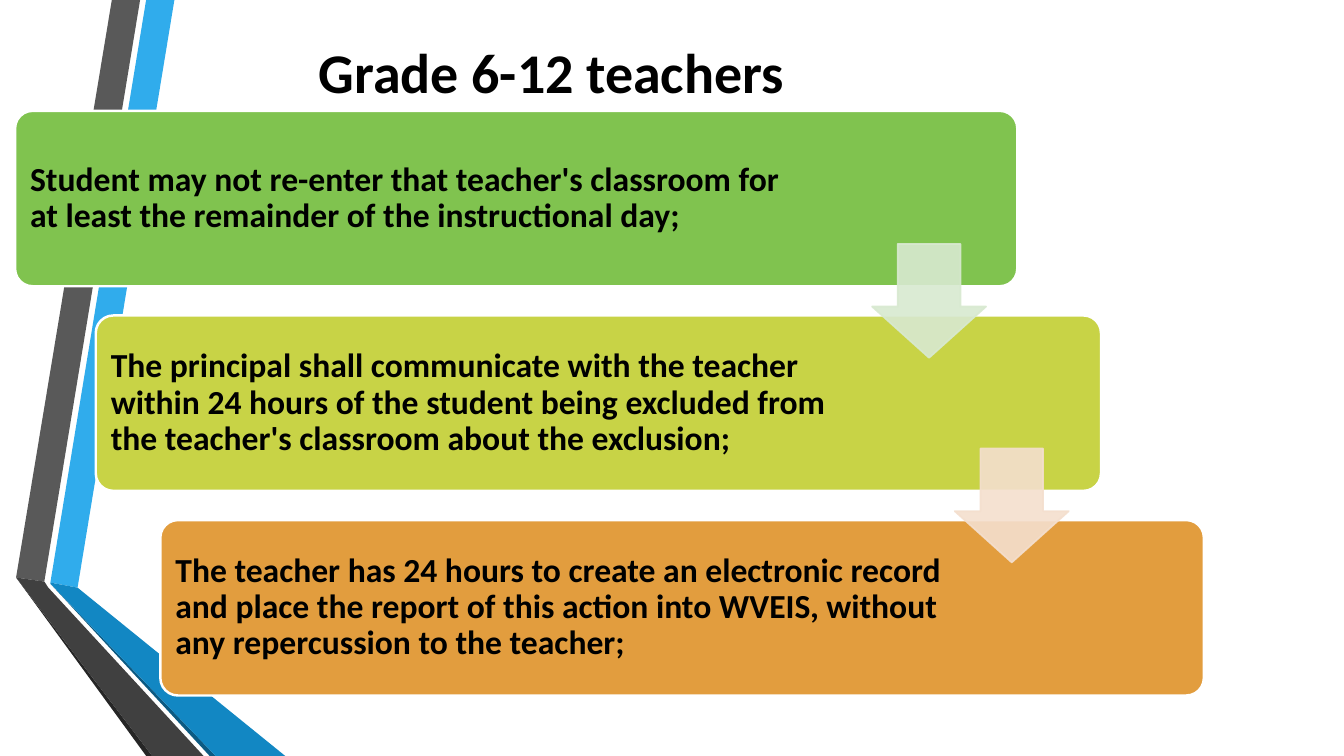
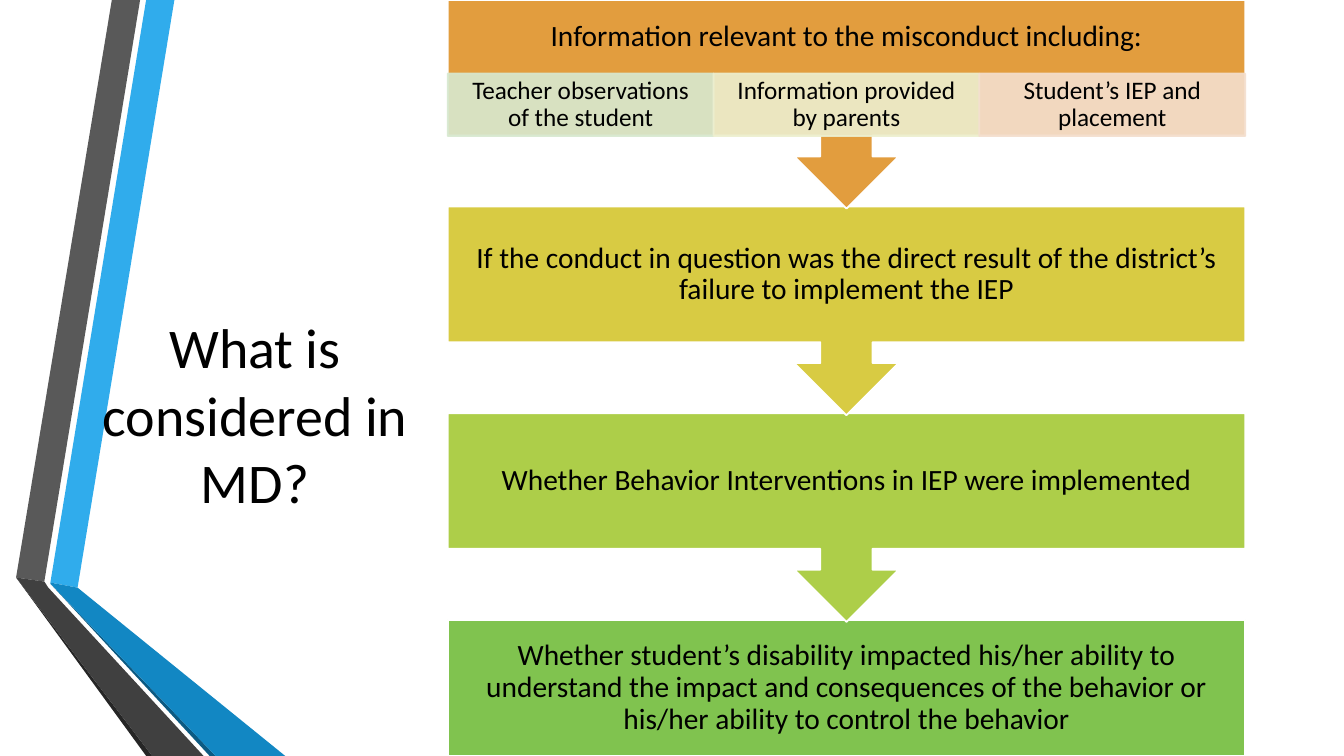
from dataclasses import dataclass

from lxml.etree import SubElement
from pptx import Presentation
from pptx.dml.color import RGBColor
from pptx.enum.shapes import MSO_SHAPE
from pptx.enum.text import MSO_ANCHOR, PP_ALIGN
from pptx.oxml.ns import qn
from pptx.util import Inches, Pt


@dataclass(frozen=True)
class Theme:
    black: str = "000000"
    white: str = "FFFFFF"
    green: str = "80C34F"
    leaf: str = "ADCE49"
    lime: str = "C8D346"
    mustard: str = "D8CB43"
    orange: str = "E29D3E"
    pale_green: str = "D8E9D0"
    pale_lime: str = "EDEFCF"
    pale_orange: str = "F4DFCE"
    font: str = "Calibri"
    comma_font: str = "Cambria"
    title_size: int = 40
    step_size: int = 24
    factor_size: int = 21
    detail_size: int = 18


THEME = Theme()

RIBBONS = [
    ("30ACEC", [(0.5, 5.78), (0.77, 5.83), (1.73, 0), (1.45, 0)]),
    ("595959", [(1.39, 0), (1.11, 0), (0.16, 5.73), (0.44, 5.77)]),
    ("262626", [(0.16, 5.73), (1.45, 7.5), (1.51, 7.5)]),
    ("0C5A82", [(0.5, 5.79), (2.08, 7.5), (2.14, 7.5)]),
    ("1287C3", [(0.5, 5.79), (2.14, 7.5), (2.83, 7.5), (0.77, 5.83), (0.5, 5.78)]),
    ("404040", [(2.02, 7.5), (0.48, 5.83), (0.44, 5.77), (0.16, 5.73), (1.51, 7.5)]),
]

STEPS_TITLE = "Grade 6-12 teachers"
STEPS = [
    (0.15, 9.94, 2.0, THEME.green, [
        ("Student may not re-enter that teacher's classroom for at least "
         "the remainder of the instructional day;", THEME.font)]),
    (0.95, 9.97, 2.18, THEME.lime, [
        ("The principal shall communicate with the teacher within 24 hours of the student "
         "being excluded from the teacher's classroom about the exclusion;", THEME.font)]),
    (1.59, 10.35, 2.28, THEME.orange, [
        ("The teacher has 24 hours to create an electronic record and place "
         "the report of this action into WVEIS", THEME.font),
        (",", THEME.comma_font),
        (" without any repercussion to the teacher;", THEME.font)]),
]
STEP_ARROWS = [(8.65, THEME.pale_green), (9.47, THEME.pale_orange)]

FACTORS_TITLE = "What is considered in MD?"
FACTORS = [
    ("Information relevant to the misconduct including:", THEME.orange),
    ("If the conduct in question was the direct result of the district’s "
     "failure to implement the IEP", THEME.mustard),
    ("Whether Behavior Interventions in IEP were implemented", THEME.leaf),
    ("Whether student’s disability impacted his/her ability to understand the impact and "
     "consequences of the behavior or his/her ability to control the behavior", THEME.green),
]
DETAILS = [
    ("Teacher observations of the student", THEME.pale_green),
    ("Information provided by parents", THEME.pale_lime),
    ("Student’s IEP and placement", THEME.pale_orange),
]


def write(shape, runs, size, bold=False, align=PP_ALIGN.CENTER, spacing=0.9,
          insets=(0.1, 0.05, 0.1, 0.05)):
    frame = shape.text_frame
    frame.word_wrap = True
    frame.vertical_anchor = MSO_ANCHOR.MIDDLE
    (frame.margin_left, frame.margin_top,
     frame.margin_right, frame.margin_bottom) = map(Inches, insets)
    paragraph = frame.paragraphs[0]
    paragraph.alignment = align
    paragraph.line_spacing = spacing
    for text, face in [(runs, THEME.font)] if isinstance(runs, str) else runs:
        run = paragraph.add_run()
        run.text = text
        run.font.name = face
        run.font.size = Pt(size)
        run.font.bold = bold
        run.font.color.rgb = RGBColor.from_string(THEME.black)


def paint(shape, fill, line=None, weight=1.25, opacity=None):
    shape.shadow.inherit = False
    shape.fill.solid()
    shape.fill.fore_color.rgb = RGBColor.from_string(fill)
    if line:
        shape.line.color.rgb = RGBColor.from_string(line)
        shape.line.width = Pt(weight)
    else:
        shape.line.fill.background()
    if opacity:
        for color in shape._element.spPr.iter(qn("a:srgbClr")):
            SubElement(color, qn("a:alpha"), val=str(opacity * 1000))


def add_block(slide, preset, box, fill, line=THEME.white, adjust=(), **style):
    block = slide.shapes.add_shape(preset, *map(Inches, box))
    for index, value in enumerate(adjust):
        block.adjustments[index] = value
    paint(block, fill, line, **style)
    return block


def add_slide(prs, title, box, bold=False):
    slide = prs.slides.add_slide(prs.slide_layouts[6])
    for color, points in RIBBONS:
        start, *rest = [(Inches(x), Inches(y)) for x, y in points]
        outline = slide.shapes.build_freeform(*start)
        outline.add_line_segments(rest, close=True)
        paint(outline.convert_to_shape(), color)
    heading = slide.shapes.add_textbox(*map(Inches, box))
    write(heading, title, THEME.title_size, bold=bold, spacing=1.0)
    return slide


def build_steps(prs):
    slide = add_slide(prs, STEPS_TITLE, (0.17, 0.31, 10.6, 0.79), bold=True)
    top, pitch, height, arrow = 1.1, 2.03, 1.74, 1.13
    for row, (left, width, right_inset, color, runs) in enumerate(STEPS):
        step = add_block(slide, MSO_SHAPE.ROUNDED_RECTANGLE,
                         (left, top + row * pitch, width, height),
                         color, adjust=(0.1,), weight=1.75)
        write(step, runs, THEME.step_size, bold=True, align=PP_ALIGN.LEFT,
              insets=(0.1, 0.1, right_inset, 0.1))
    for row, (left, color) in enumerate(STEP_ARROWS):
        add_block(slide, MSO_SHAPE.DOWN_ARROW,
                  (left, 2.42 + row * pitch, arrow, arrow),
                  color, color, adjust=(0.55, 0.45), opacity=90)


def build_factors(prs):
    slide = add_slide(prs, FACTORS_TITLE, (0.83, 2.69, 3.4, 2.83))
    left, width, pitch, callout, last = 4.44, 7.91, 2.05, 2.07, 1.35
    header, detail, pad = 0.73, 0.62, 0.16
    for row, (text, color) in reversed(list(enumerate(FACTORS))):
        is_last = row == len(FACTORS) - 1
        preset = MSO_SHAPE.RECTANGLE if is_last else MSO_SHAPE.DOWN_ARROW_CALLOUT
        factor = add_block(slide, preset,
                           (left, row * pitch, width, last if is_last else callout), color)
        bottom = pad if row else pad + detail
        write(factor, text, THEME.factor_size, insets=(pad, pad, pad, bottom))
    cell = width / len(DETAILS)
    for column, (text, color) in enumerate(DETAILS):
        box = add_block(slide, MSO_SHAPE.RECTANGLE,
                        (left + column * cell, header, cell, detail),
                        color, color, opacity=90)
        write(box, text, THEME.detail_size, insets=(0.14, 0.03, 0.14, 0.03))


def main():
    prs = Presentation()
    prs.slide_width, prs.slide_height = Inches(13.33), Inches(7.5)
    build_steps(prs)
    build_factors(prs)
    prs.save("out.pptx")


if __name__ == "__main__":
    main()
